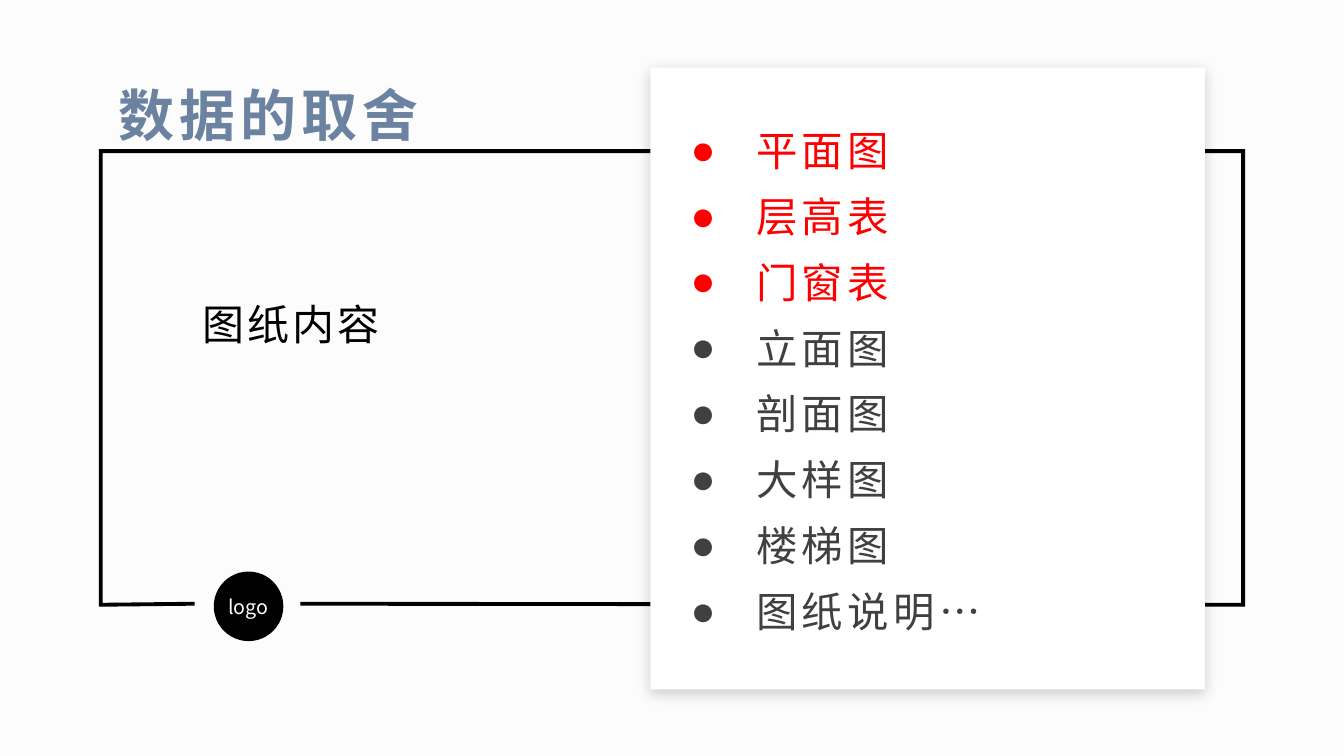
from dataclasses import dataclass

from lxml import etree
from pptx import Presentation, util as u
from pptx.dml.color import RGBColor
from pptx.enum import shapes, text
from pptx.oxml import ns

FONT = "Noto Sans CJK SC"
BLACK, WHITE, RED, GREY, BLUE = "000000", "FFFFFF", "FF0000", "404040", "6B82A0"
HANG = u.Inches(0.65)
TOP, MID, LOW = text.MSO_ANCHOR.TOP, text.MSO_ANCHOR.MIDDLE, text.MSO_ANCHOR.BOTTOM


@dataclass
class Line:
    words: str
    color: str


@dataclass
class Label:
    box: tuple[float, float, float, float]
    lines: list[Line]
    size: float
    gap: float = 0
    lead: float = 1.0
    after: float = 0
    bold: bool = False
    anchor: text.MSO_ANCHOR = TOP
    align: text.PP_ALIGN = text.PP_ALIGN.LEFT
    pad: tuple[float, float] = (0.07, 0.03)
    dots: bool = False


def rgb(code: str) -> RGBColor:
    return RGBColor.from_string(code)


def child(node, tag: str, **attrs: str):
    return etree.SubElement(node, ns.qn(tag), attrs)


def bullet(para) -> None:
    props = para._p.get_or_add_pPr()
    props.set("marL", str(HANG))
    props.set("indent", str(-HANG))
    child(props, "a:buFont", typeface="Arial")
    child(props, "a:buChar", char="●")


def write(slide, label: Label) -> None:
    frame = slide.shapes.add_textbox(*map(u.Inches, label.box)).text_frame
    frame.word_wrap = True
    frame.vertical_anchor = label.anchor
    side, edge = map(u.Inches, label.pad)
    frame.margin_left = frame.margin_right = side
    frame.margin_top = frame.margin_bottom = edge
    for i, line in enumerate(label.lines):
        para = frame.add_paragraph() if i else frame.paragraphs[0]
        if label.dots:
            bullet(para)
        para.alignment = label.align
        para.line_spacing = label.lead
        para.space_after = u.Pt(label.after)
        run = para.add_run()
        run.text = line.words
        font = run.font
        font.name, font.size, font.bold = FONT, u.Pt(label.size), label.bold
        font.color.rgb = rgb(line.color)
        props = run._r.get_or_add_rPr()
        props.set("spc", str(round(label.gap * 100)))
        child(props, "a:ea", typeface=FONT)


def solid(slide, kind, box: tuple[float, float, float, float], color: str):
    shape = slide.shapes.add_shape(kind, *map(u.Inches, box))
    shape.shadow.inherit = False
    shape.fill.solid()
    shape.fill.fore_color.rgb = rgb(color)
    shape.line.fill.background()
    return shape


def shade(shape) -> None:
    """Cast a soft shadow below the shape."""
    effects = shape._element.spPr.find(ns.qn("a:effectLst"))
    outer = child(effects, "a:outerShdw", blurRad=str(u.Pt(10)), dist=str(u.Pt(3)),
                  dir="5400000", algn="t", rotWithShape="0")
    child(child(outer, "a:srgbClr", val="0D0D0D"), "a:alpha", val="20000")


def border(slide) -> None:
    """Draw the open frame, with a gap for the badge; points in 1/100 inch."""
    pen = slide.shapes.build_freeform(193, 599, scale=u.Inches(0.01))
    pen.add_line_segments(
        [(100, 600), (100, 150), (1233, 150), (1233, 600), (298, 599)], close=False)
    shape = pen.convert_to_shape()
    shape.shadow.inherit = False
    shape.fill.background()
    shape.line.color.rgb = rgb(BLACK)
    shape.line.width = u.Pt(2.75)
    child(shape._element.spPr.find(ns.qn("a:ln")), "a:miter", lim="800000")


def main() -> None:
    deck = Presentation()
    deck.slide_width, deck.slide_height = u.Inches(13.33), u.Inches(7.5)
    slide = deck.slides.add_slide(deck.slide_layouts[6])
    slide.background.fill.solid()
    slide.background.fill.fore_color.rgb = rgb("FCFCFD")

    border(slide)
    solid(slide, shapes.MSO_SHAPE.OVAL, (2.12, 5.67, 0.69, 0.69), BLACK)
    shade(solid(slide, shapes.MSO_SHAPE.RECTANGLE, (6.45, 0.67, 5.5, 6.17), WHITE))

    items = [Line(name, RED) for name in ("平面图", "层高表", "门窗表")]
    items += [Line(name, GREY)
              for name in ("立面图", "剖面图", "大样图", "楼梯图", "图纸说明…")]
    labels = [
        Label((2.12, 5.85, 0.69, 0.34), [Line("logo", WHITE)], 14,
              align=text.PP_ALIGN.CENTER, pad=(0.1, 0.05)),
        Label((1.11, 0.58, 3.96, 0.92), [Line("数据的取舍", BLUE)], 40,
              gap=3.5, lead=1.1, bold=True, anchor=LOW),
        Label((1.94, 2.93, 3.96, 0.42), [Line("图纸内容", BLACK)], 30, gap=2.2),
        Label((6.78, 1, 4.83, 5.5), items, 29.6,
              gap=3.1, lead=1.1, after=8, anchor=MID, dots=True),
    ]
    for label in labels:
        write(slide, label)
    deck.save("out.pptx")


if __name__ == "__main__":
    main()
